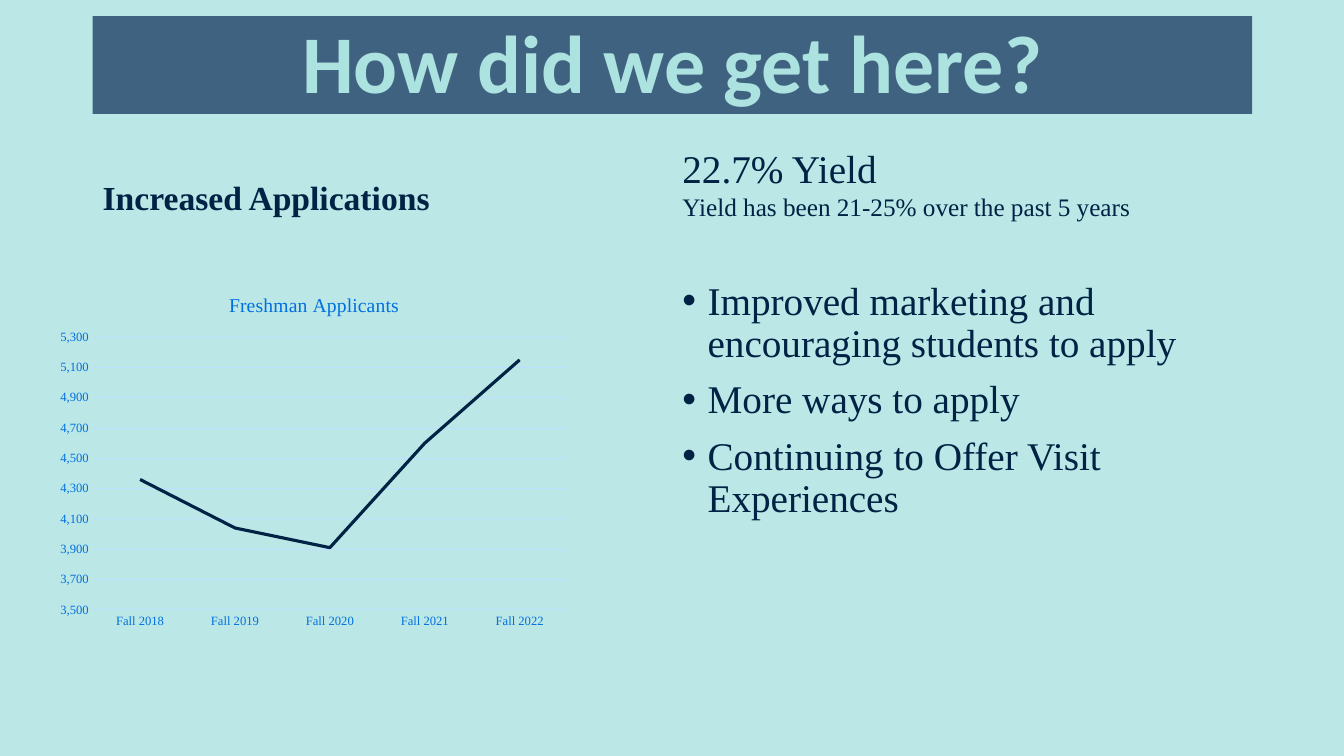
from dataclasses import dataclass

from lxml import etree
from pptx import Presentation
from pptx import util as u
from pptx.chart import data as chart_data
from pptx.dml.color import RGBColor
from pptx.enum import chart as chart_enum, shapes, text
from pptx.oxml import parse_xml
from pptx.oxml.ns import nsdecls, qn


@dataclass(frozen=True)
class Theme:
    background: str = "BBE7E6"
    banner: str = "3F6280"
    banner_text: str = "ACE2E0"
    ink: str = "002244"
    axis: str = "006FDF"
    grid: str = "BDDEFF"
    heading_font: str = "Calibri"
    body_font: str = "Times New Roman"
    title_size: float = 58.5
    body_size: int = 28
    heading_size: int = 24
    note_size: int = 18
    chart_title_size: int = 14
    axis_size: int = 9


THEME = Theme()
APPLICANTS = {
    "Fall 2018": 4360,
    "Fall 2019": 4040,
    "Fall 2020": 3910,
    "Fall 2021": 4600,
    "Fall 2022": 5150,
}
REASONS = [
    "Improved marketing and encouraging students to apply",
    "More ways to apply",
    "Continuing to Offer Visit Experiences",
]


def inches(box):
    return [u.Inches(length) for length in box]


def set_values(target, values):
    for name, value in values.items():
        setattr(target, name, value)


def style_font(font, size, color=THEME.ink, name=THEME.body_font, bold=False):
    set_values(font, {"size": u.Pt(size), "name": name, "bold": bold})
    font.color.rgb = RGBColor.from_string(color)


def style_line(line, color, width):
    line.color.rgb = RGBColor.from_string(color)
    line.width = u.Pt(width)


def add_bullet(paragraph):
    properties = paragraph._p.get_or_add_pPr()
    properties.set("marL", str(u.Inches(0.25)))
    properties.set("indent", str(-u.Inches(0.25)))
    etree.SubElement(properties, qn("a:buFont")).set("typeface", "Arial")
    etree.SubElement(properties, qn("a:buChar")).set("char", "•")


def add_text(slide, box, lines, anchor=text.MSO_ANCHOR.TOP, bullets=False,
             **spacing):
    """Add a text box; each line is (wording, size, bold)."""
    frame = slide.shapes.add_textbox(*inches(box)).text_frame
    set_values(frame, {"word_wrap": True, "vertical_anchor": anchor})
    for index, (wording, size, bold) in enumerate(lines):
        paragraph = frame.add_paragraph() if index else frame.paragraphs[0]
        paragraph.text = wording
        if bullets:
            add_bullet(paragraph)
        set_values(paragraph, spacing)
        if not index:
            paragraph.space_before = u.Pt(0)
        style_font(paragraph.runs[0].font, size, bold=bold)


def add_banner(slide, box, wording):
    banner = slide.shapes.add_shape(shapes.MSO_SHAPE.RECTANGLE, *inches(box))
    banner.shadow.inherit = False
    banner.fill.solid()
    banner.fill.fore_color.rgb = RGBColor.from_string(THEME.banner)
    banner.line.fill.background()
    set_values(banner.text_frame, {
        "word_wrap": True, "vertical_anchor": text.MSO_ANCHOR.BOTTOM})
    paragraph = banner.text_frame.paragraphs[0]
    set_values(paragraph, {
        "text": wording, "alignment": text.PP_ALIGN.CENTER,
        "line_spacing": 0.8})
    style_font(paragraph.runs[0].font, THEME.title_size, THEME.banner_text,
               THEME.heading_font, True)


def place_plot(chart, left, top, width, height):
    """Fix the inner plot area, in fractions of the chart."""
    parts = {"x": left, "y": top, "w": width, "h": height}
    values = "".join(f'<c:{key} val="{value}"/>'
                     for key, value in parts.items())
    layout = parse_xml(
        f'<c:layout {nsdecls("c")}><c:manualLayout>'
        '<c:layoutTarget val="inner"/>'
        f'<c:xMode val="edge"/><c:yMode val="edge"/>{values}'
        '</c:manualLayout></c:layout>')
    plot_area = chart._chartSpace.chart.plotArea
    for old in plot_area.findall(qn("c:layout")):
        plot_area.remove(old)
    plot_area.insert(0, layout)


def add_applicant_chart(slide, box):
    data = chart_data.CategoryChartData(number_format="#,##0")
    data.categories = list(APPLICANTS)
    data.add_series("Series 1", list(APPLICANTS.values()))
    chart = slide.shapes.add_chart(
        chart_enum.XL_CHART_TYPE.LINE, *inches(box), data).chart
    style_font(chart.font, 10)
    set_values(chart, {"has_legend": False, "has_title": True})
    title = chart.chart_title.text_frame
    title.text = "Freshman Applicants"
    style_font(title.paragraphs[0].runs[0].font, THEME.chart_title_size,
               THEME.axis)
    place_plot(chart, 0.08, 0.17, 0.9, 0.76)

    chart.plots[0].vary_by_categories = False
    series = chart.plots[0].series[0]
    series.smooth = False
    series.marker.style = chart_enum.XL_MARKER_STYLE.NONE
    style_line(series.format.line, THEME.ink, 2.25)

    for axis in (chart.category_axis, chart.value_axis):
        set_values(axis, {
            "major_tick_mark": chart_enum.XL_TICK_MARK.NONE,
            "minor_tick_mark": chart_enum.XL_TICK_MARK.NONE})
        style_font(axis.tick_labels.font, THEME.axis_size, THEME.axis)
    style_line(chart.category_axis.format.line, THEME.grid, 0.75)
    axis = chart.value_axis
    set_values(axis, {
        "minimum_scale": 3500, "maximum_scale": 5300, "major_unit": 200,
        "has_major_gridlines": True})
    set_values(axis.tick_labels, {
        "number_format": "#,##0", "number_format_is_linked": False})
    axis.format.line.fill.background()
    style_line(axis.major_gridlines.format.line, THEME.grid, 0.75)


def build_slide(presentation):
    slide = presentation.slides.add_slide(presentation.slide_layouts[6])
    slide.background.fill.solid()
    slide.background.fill.fore_color.rgb = RGBColor.from_string(
        THEME.background)
    body_spacing = {"line_spacing": 0.9, "space_before": u.Pt(10)}
    add_text(slide, (0.92, 1.31, 5.64, 0.9),
             [("Increased Applications", THEME.heading_size, True)],
             text.MSO_ANCHOR.BOTTOM, **body_spacing)
    add_text(slide, (6.67, 2.74, 5.75, 3.1),
             [(reason, THEME.body_size, False) for reason in REASONS],
             bullets=True, **body_spacing)
    add_applicant_chart(slide, (0.5, 2.74, 5.23, 3.56))
    add_banner(slide, (0.92, 0.16, 11.5, 0.97), "How did we get here?")
    add_text(slide, (6.67, 1.38, 5.94, 0.88), [
        ("22.7% Yield", THEME.body_size, False),
        ("Yield has been 21-25% over the past 5 years", THEME.note_size,
         False)])


def main():
    presentation = Presentation()
    set_values(presentation, {
        "slide_width": u.Inches(13.33), "slide_height": u.Inches(7.5)})
    build_slide(presentation)
    presentation.save("out.pptx")


if __name__ == "__main__":
    main()
